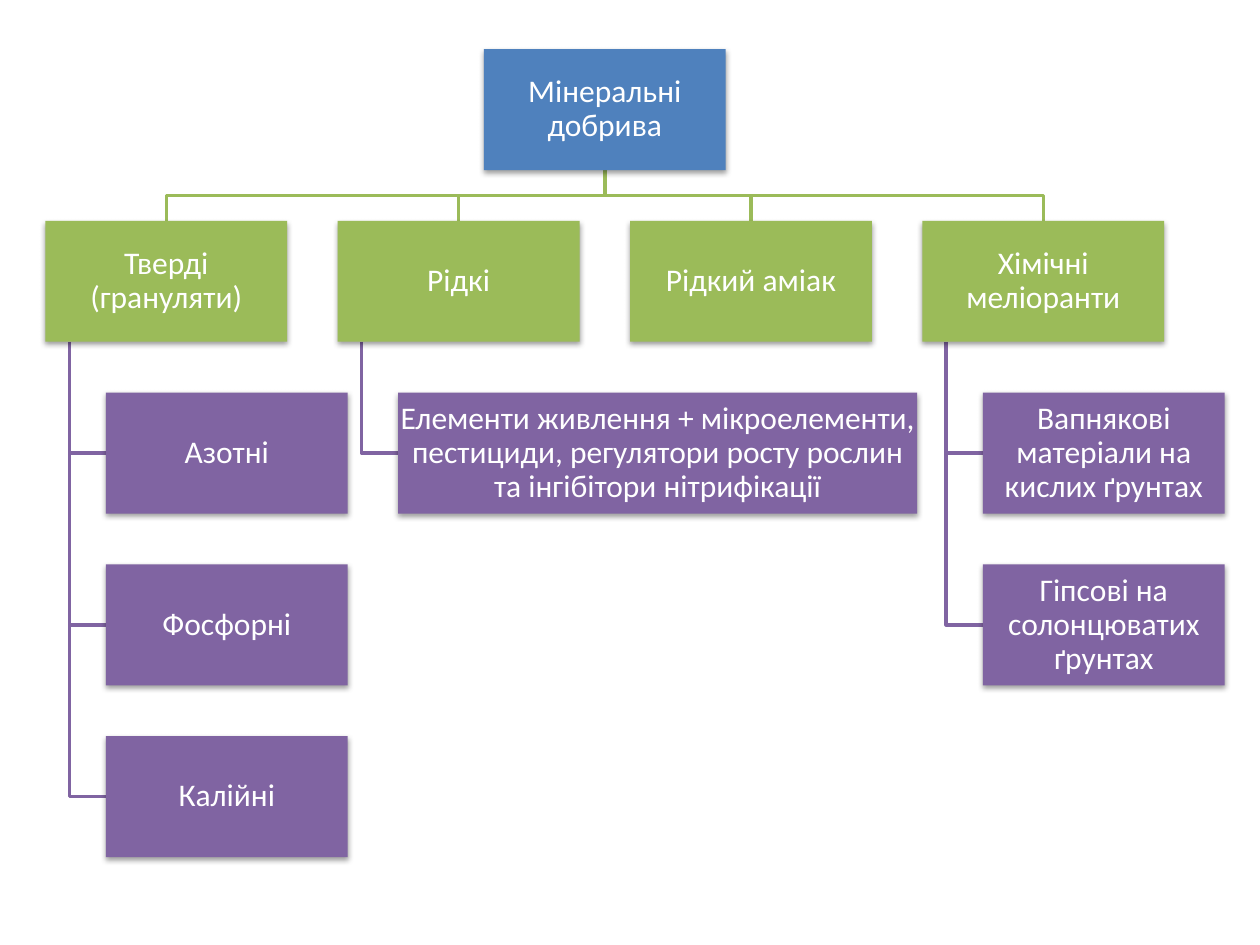
from lxml import etree
from pptx import Presentation
from pptx.dml.color import RGBColor
from pptx.enum.shapes import MSO_SHAPE
from pptx.enum.text import MSO_ANCHOR, PP_ALIGN
from pptx.oxml.ns import qn
from pptx.util import Inches, Pt

RECTANGLE = MSO_SHAPE.RECTANGLE
MIDDLE = MSO_ANCHOR.MIDDLE
CENTER = PP_ALIGN.CENTER

BLUE = RGBColor(0x4F, 0x81, 0xBD)
GREEN = RGBColor(0x9B, 0xBB, 0x59)
PURPLE = RGBColor(0x80, 0x64, 0xA2)
WHITE = RGBColor(0xFF, 0xFF, 0xFF)

BOX_WIDTH = Inches(1.92)
BOX_HEIGHT = Inches(0.96)
WIDE_WIDTH = Inches(4.12)
ROW_STEP = int(BOX_HEIGHT * 1.42)
COLUMN_STEP = Inches(2.32)
TOP = Inches(0.39)
LEFT = Inches(0.36)
STEM = Inches(0.19)
INDENT = Inches(0.48)

ROOT = "Мінеральні добрива"
BRANCHES = [
    ("Тверді (грануляти)", BOX_WIDTH, ["Азотні", "Фосфорні", "Калійні"]),
    ("Рідкі", WIDE_WIDTH, [
        "Елементи живлення + мікроелементи, пестициди, "
        "регулятори росту рослин та інгібітори нітрифікації"]),
    ("Рідкий аміак", BOX_WIDTH, []),
    ("Хімічні меліоранти", BOX_WIDTH, [
        "Вапнякові матеріали на кислих ґрунтах",
        "Гіпсові на солонцюватих ґрунтах"]),
]


def add_shadow(box):
    """Give a box a soft shadow just below it."""
    box.shadow.inherit = False
    effects = box._element.spPr.find(qn("a:effectLst"))
    shadow = etree.SubElement(effects, qn("a:outerShdw"), blurRad="40000",
                              dist="20000", dir="5400000", rotWithShape="0")
    color = etree.SubElement(shadow, qn("a:srgbClr"), val="000000")
    etree.SubElement(color, qn("a:alpha"), val="38000")


def add_box(page, text, left, top, width, color):
    """Place one labelled box of the chart."""
    box = page.shapes.add_shape(RECTANGLE, left, top, width, BOX_HEIGHT)
    box.fill.solid()
    box.fill.fore_color.rgb = color
    box.line.fill.background()
    add_shadow(box)
    frame = box.text_frame
    frame.word_wrap = True
    frame.vertical_anchor = MIDDLE
    frame.margin_left = frame.margin_right = Inches(0.01)
    frame.margin_top = frame.margin_bottom = Inches(0.01)
    para = frame.paragraphs[0]
    para.alignment = CENTER
    para.line_spacing = 0.9
    span = para.add_run()
    span.text = text
    span.font.size = Pt(18)
    span.font.name = "Calibri"
    span.font.color.rgb = WHITE


def add_link(page, points, color):
    """Draw an open angular line through the points."""
    builder = page.shapes.build_freeform(*points[0])
    builder.add_line_segments(points[1:], close=False)
    link = builder.convert_to_shape()
    link.fill.background()
    link.line.color.rgb = color
    link.line.width = Pt(2)
    link.shadow.inherit = False


def add_root(page, left, top, branch_lefts):
    """Place the top box and its links down to the branches."""
    half = BOX_WIDTH // 2
    bottom = top + BOX_HEIGHT
    bend = bottom + (ROW_STEP - BOX_HEIGHT) // 2
    for branch_left in branch_lefts:
        add_link(page, [(left + half, bottom), (left + half, bend),
                        (branch_left + half, bend),
                        (branch_left + half, top + ROW_STEP)], GREEN)
    add_box(page, ROOT, left, top, BOX_WIDTH, BLUE)


def add_branch(page, left, top, title, leaf_width, leaves):
    """Place a branch box with its leaves stacked below it."""
    leaf_left = left + INDENT
    leaf_tops = [top + ROW_STEP * row for row in range(1, len(leaves) + 1)]
    for leaf_top in leaf_tops:
        middle = leaf_top + BOX_HEIGHT // 2
        add_link(page, [(left + STEM, top + BOX_HEIGHT), (left + STEM, middle),
                        (leaf_left, middle)], PURPLE)
    add_box(page, title, left, top, BOX_WIDTH, GREEN)
    for leaf, leaf_top in zip(leaves, leaf_tops):
        add_box(page, leaf, leaf_left, leaf_top, leaf_width, PURPLE)


def main():
    """Build the deck and save it."""
    deck = Presentation()
    deck.slide_width = Inches(10)
    deck.slide_height = Inches(7.5)
    page = deck.slides.add_slide(deck.slide_layouts[6])
    lefts = [LEFT + COLUMN_STEP * column for column in range(len(BRANCHES))]
    add_root(page, (lefts[0] + lefts[-1]) // 2, TOP, lefts)
    for left, branch in zip(lefts, BRANCHES):
        add_branch(page, left, TOP + ROW_STEP, *branch)
    deck.save("out.pptx")


if __name__ == "__main__":
    main()
